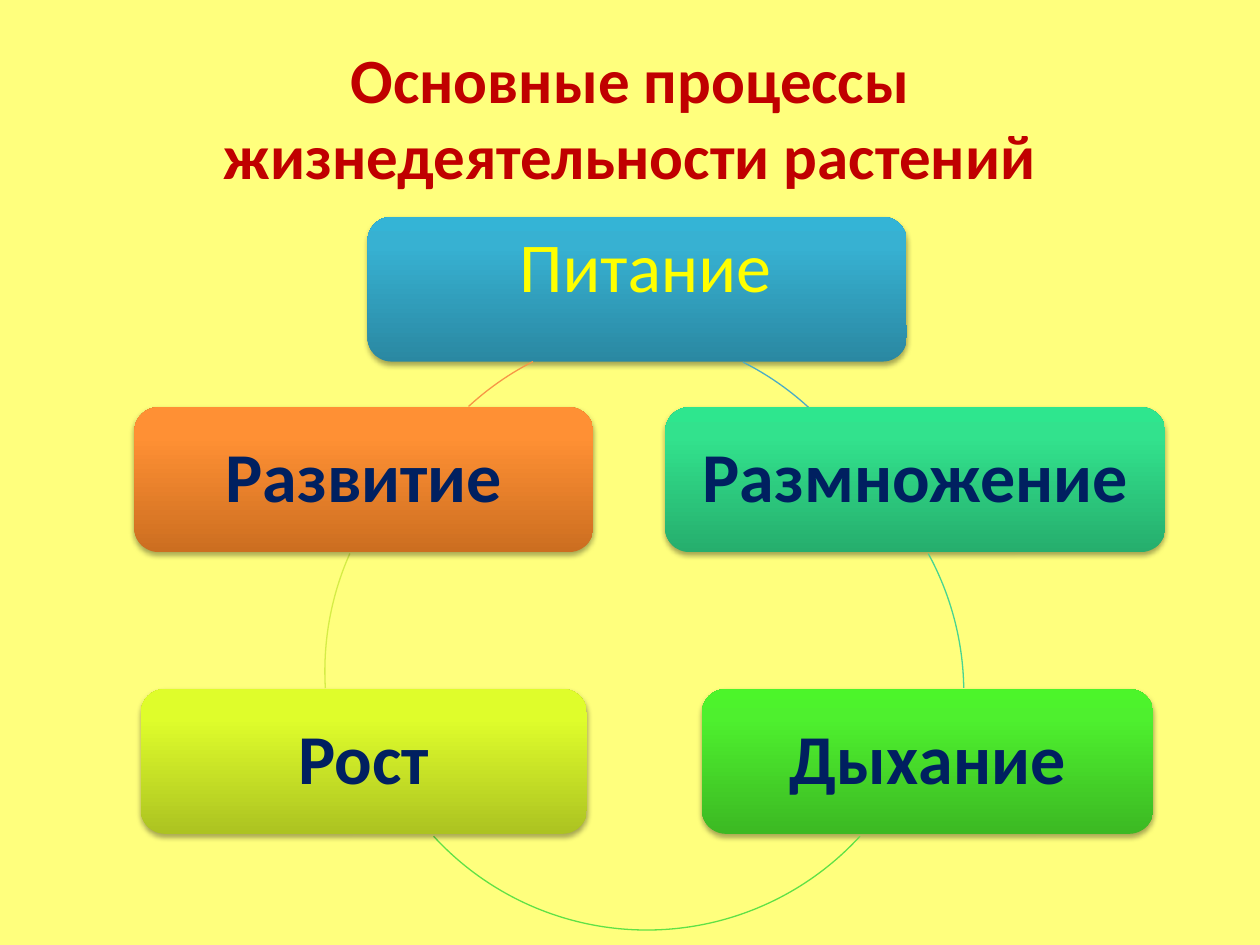
from lxml import etree
from pptx import Presentation
from pptx.dml.color import RGBColor
from pptx.enum.shapes import MSO_SHAPE
from pptx.enum.text import MSO_ANCHOR, MSO_AUTO_SIZE, PP_ALIGN
from pptx.oxml.ns import qn
from pptx.util import Cm, Pt

BOX, ARC = MSO_SHAPE.ROUNDED_RECTANGLE, MSO_SHAPE.ARC
MIDDLE, TOP = MSO_ANCHOR.MIDDLE, MSO_ANCHOR.TOP
CENTER = PP_ALIGN.CENTER
NO_FIT = MSO_AUTO_SIZE.NONE

FONT = "Calibri"
COLORS = {
    "back": "FFFF7D",
    "title": "C00000",
    "navy": "002060",
    "yellow": "FFFF00",
    "shadow": "000000",
}
STOPS = (0, 80, 100)
HIGH = 2.92   # height of every box, cm
RING = 11.66  # diameter of every arc's circle, cm

# text, left, top, width, gradient from bottom to top
BOXES = [
    ("", 7.41, 4.37, 10.87, ("2A88A2", "37B1D2", "34B4D6")),
    ("Размножение", 13.41, 8.21, 10.08, ("26AE6D", "32E28D", "2EE68E")),
    ("Дыхание", 14.15, 13.89, 9.1, ("3CB923", "4EF02E", "4CF52A")),
    ("Рост", 2.84, 13.89, 8.99, ("ACC321", "DFFD2B", "E1FF2B")),
    ("Развитие", 2.71, 8.21, 9.25, ("CC6E20", "FF9034", "FF9136")),
]
# left, top, start angle, end angle, colour; each follows its box
ARCS = [
    (6.53, 6.68, 296.7, 312.5, "4BACC6"),
    (7.77, 8.13, 331.3, 359.1, "48D491"),
    (7.21, 7.09, 42.5, 137.5, "60E146"),
    (6.55, 7.7, 176.6, 204, "D5EC46"),
    (7.57, 6.65, 227.3, 242.9, "F79646"),
]


def rgb(name):
    return RGBColor.from_string(COLORS.get(name, name))


def add_node(parent, tag, **attrs):
    return etree.SubElement(parent, qn(tag), {k: str(v) for k, v in attrs.items()})


def add_run(frame, text, size, color, bold=False):
    par = frame.paragraphs[0]
    par.alignment = CENTER
    run = par.add_run()
    run.text = text
    font = run.font
    font.name, font.size, font.bold = FONT, Pt(size), bold
    font.color.rgb = rgb(color)
    return par


def set_blend(shape, hues):
    """Fill the shape with a gradient that runs from bottom to top."""
    shape.fill.gradient()
    shape.fill.gradient_angle = 90
    stops = shape._element.spPr.find(qn("a:gradFill")).find(qn("a:gsLst"))
    for old in list(stops):
        stops.remove(old)
    for pos, hue in zip(STOPS, hues):
        stop = add_node(stops, "a:gs", pos=pos * 1000)
        add_node(stop, "a:srgbClr", val=hue)


def set_shadow(shape):
    shape.shadow.inherit = False
    effects = shape._element.spPr.find(qn("a:effectLst"))
    outer = add_node(effects, "a:outerShdw", blurRad=Pt(3.1), dist=Pt(1.8),
                     dir=5400000, rotWithShape=0)
    color = add_node(outer, "a:srgbClr", val=COLORS["shadow"])
    add_node(color, "a:alpha", val=35000)


def add_box(slide, text, left, top, width, hues):
    box = slide.shapes.add_shape(BOX, Cm(left), Cm(top), Cm(width), Cm(HIGH))
    set_blend(box, hues)
    box.line.fill.background()
    set_shadow(box)
    if text:
        frame = box.text_frame
        frame.word_wrap = True
        frame.vertical_anchor = MIDDLE
        frame.margin_left = frame.margin_right = Cm(0.42)
        frame.margin_top = frame.margin_bottom = Cm(0.42)
        par = add_run(frame, text, 40, "navy", True)
        par.line_spacing = 0.9


def add_arc(slide, left, top, start, end, color):
    arc = slide.shapes.add_shape(ARC, Cm(left), Cm(top), Cm(RING), Cm(RING))
    for i, angle in enumerate((start, end)):
        arc.adjustments[i] = angle * 0.6  # 60000 units a degree, scaled by 100000
    arc.fill.background()
    arc.line.color.rgb = rgb(color)
    arc.line.width = Pt(0.75)
    arc.shadow.inherit = False


def add_title(slide, text):
    title = slide.shapes.title
    title.left, title.top = Cm(1.27), Cm(0.76)
    title.width, title.height = Cm(22.86), Cm(3.18)
    frame = title.text_frame
    frame.auto_size = NO_FIT
    frame.vertical_anchor = MIDDLE
    add_run(frame, text, 36, "title", True)


def add_label(slide, text, left, top, width, height):
    label = slide.shapes.add_textbox(Cm(left), Cm(top), Cm(width), Cm(height))
    frame = label.text_frame
    frame.word_wrap = True
    frame.vertical_anchor = TOP
    add_run(frame, text, 40, "yellow")


def main():
    deck = Presentation()
    deck.slide_width, deck.slide_height = Cm(25.4), Cm(19.05)
    slide = deck.slides.add_slide(deck.slide_layouts[5])
    back = slide.background.fill
    back.solid()
    back.fore_color.rgb = rgb("back")
    add_title(slide, "Основные процессы жизнедеятельности растений")
    for box, arc in zip(BOXES, ARCS):
        add_box(slide, *box)
        add_arc(slide, *arc)
    add_label(slide, "Питание", 8.94, 4.37, 8.13, 2.74)
    deck.save("out.pptx")


if __name__ == "__main__":
    main()
